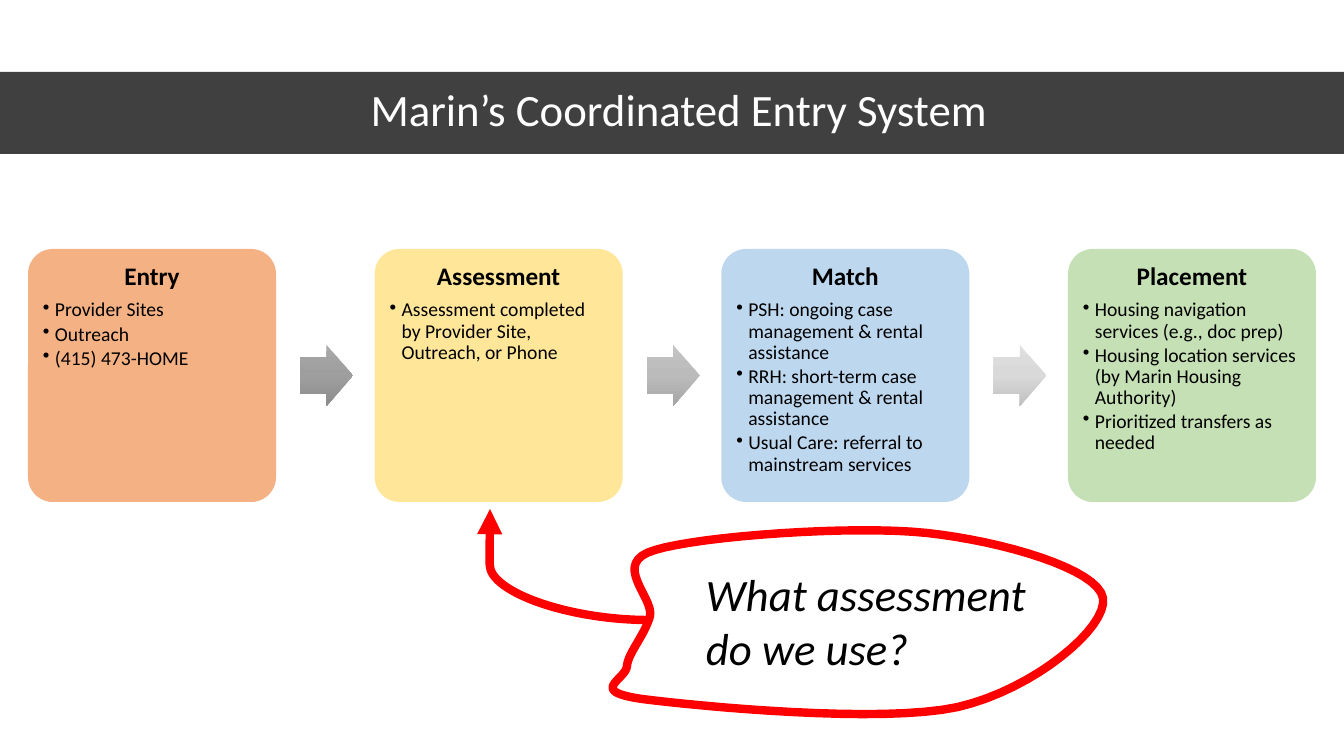
from copy import deepcopy

from lxml import etree
from pptx import Presentation
from pptx.dml.color import RGBColor
from pptx.enum.shapes import MSO_CONNECTOR, MSO_SHAPE
from pptx.enum.text import MSO_ANCHOR, PP_ALIGN
from pptx.oxml.ns import qn
from pptx.util import Pt

RECT, ROUND, ARROW = MSO_SHAPE.RECTANGLE, MSO_SHAPE.ROUNDED_RECTANGLE, MSO_SHAPE.RIGHT_ARROW
CURVE = MSO_CONNECTOR.CURVE
TOP, MIDDLE = MSO_ANCHOR.TOP, MSO_ANCHOR.MIDDLE
LEFT, CENTER = PP_ALIGN.LEFT, PP_ALIGN.CENTER
BLACK, WHITE = RGBColor(0, 0, 0), RGBColor(255, 255, 255)
RED = RGBColor(255, 0, 0)
ORANGE, YELLOW = RGBColor(0xF4, 0xB1, 0x83), RGBColor(0xFF, 0xE6, 0x99)
BLUE, GREEN = RGBColor(0xBD, 0xD7, 0xEE), RGBColor(0xC5, 0xE0, 0xB4)
FONT = "Calibri"

TITLE = "Marin’s Coordinated Entry System"
QUESTION = "What assessment do we use?"
STAGES = [
    ("Entry", ORANGE, ["Provider Sites", "Outreach", "(415) 473-HOME"]),
    ("Assessment", YELLOW, ["Assessment completed by Provider Site, Outreach, or Phone"]),
    ("Match", BLUE, [
        "PSH: ongoing case management & rental assistance",
        "RRH: short-term case management & rental assistance",
        "Usual Care: referral to mainstream services",
    ]),
    ("Placement", GREEN, [
        "Housing navigation services (e.g., doc prep)",
        "Housing location services (by Marin Housing Authority)",
        "Prioritized transfers as needed",
    ]),
]
ARROW_GREYS = [(0xA8, 0x9E, 0x8C), (0xC3, 0xBB, 0xA6), (0xDF, 0xD9, 0xC0)]
BUBBLE_START = (650, 616)
BUBBLE_CURVES = [
    ((654, 597), (610, 563), (655, 550)),
    ((701, 536), (853, 525), (927, 533)),
    ((1002, 541), (1098, 569), (1103, 598)),
    ((1108, 627), (1035, 689), (958, 707)),
    ((881, 724), (697, 706), (642, 699)),
    ((587, 691), (626, 680), (627, 666)),
    ((628, 653), (645, 635), BUBBLE_START),
]
CURVE_STEPS = 16
FIRST_LEFT, LAST_LEFT, STAGE_TOP = 28, 1068, 249
STAGE_W, STAGE_H = 248, 253
PITCH = (LAST_LEFT - FIRST_LEFT) / (len(STAGES) - 1)
PAD, INSET, INDENT = 8, 7, 12
ARROW_DX, ARROW_W, ARROW_H = 272, 53, 61


def px(n):
    return round(n * 914400 / 100.8)


def add_shape(kind, x, y, w, h, color=None, adjust=()):
    s = slide.shapes.add_shape(kind, px(x), px(y), px(w), px(h))
    s.shadow.inherit = False
    s.line.fill.background()
    for i, value in enumerate(adjust):
        s.adjustments[i] = value
    if color is not None:
        s.fill.solid()
        s.fill.fore_color.rgb = color
    return s


def add_box(x, y, w, h, anchor=TOP, inset=None):
    tf = slide.shapes.add_textbox(px(x), px(y), px(w), px(h)).text_frame
    tf.word_wrap = True
    tf.vertical_anchor = anchor
    if inset is not None:
        tf.margin_left = tf.margin_right = tf.margin_top = tf.margin_bottom = px(inset)
    return tf


def add_text(tf, text, size=14, color=BLACK, bold=False, italic=False,
             align=LEFT, spacing=0.9, after=0, bullet=False):
    p = tf.paragraphs[-1]
    if p.runs:
        p = tf.add_paragraph()
    p.alignment, p.line_spacing, p.space_after = align, spacing, Pt(after)
    if bullet:
        ppr = p._p.get_or_add_pPr()
        ppr.set("marL", str(px(INDENT)))
        ppr.set("indent", str(-px(INDENT)))
        etree.SubElement(ppr, qn("a:buChar")).set("char", "•")
    r = p.add_run()
    r.text = text
    r.font.name, r.font.size, r.font.color.rgb = FONT, Pt(size), color
    r.font.bold, r.font.italic = bold, italic


def fill_gradient(s, greys):
    s.fill.gradient()
    s.fill.gradient_angle = 270
    stops = s._element.spPr.find(".//" + qn("a:gsLst"))
    stops.insert(1, deepcopy(stops[0]))
    for i, (stop, grey) in enumerate(zip(s.fill.gradient_stops, greys)):
        stop.position = i / 2
        stop.color.rgb = RGBColor(grey, grey, grey)


def curve_points(start, curves):
    for a, b, end in curves:
        for i in range(1, CURVE_STEPS + 1):
            t = i / CURVE_STEPS
            u = 1 - t
            yield tuple(px(u**3 * p0 + 3 * u * u * t * p1 + 3 * u * t * t * p2 + t**3 * p3)
                        for p0, p1, p2, p3 in zip(start, a, b, end))
        start = end


def add_bubble():
    builder = slide.shapes.build_freeform(*map(px, BUBBLE_START))
    builder.add_line_segments(list(curve_points(BUBBLE_START, BUBBLE_CURVES)), close=True)
    s = builder.convert_to_shape()
    s.shadow.inherit = False
    s.fill.background()
    s.line.color.rgb, s.line.width = RED, Pt(6)


def add_pointer():
    s = slide.shapes.add_connector(CURVE, px(490), px(509), px(649), px(620))
    s.line.color.rgb, s.line.width = RED, Pt(6)
    sppr = s._element.spPr
    sppr.find(qn("a:xfrm")).set("rot", "10800000")
    guide = etree.SubElement(sppr.find(".//" + qn("a:avLst")), qn("a:gd"))
    guide.set("name", "adj1")
    guide.set("fmla", "val 100200")
    etree.SubElement(sppr.find(qn("a:ln")), qn("a:tailEnd")).set("type", "triangle")
    etree.SubElement(sppr, qn("a:effectLst"))


prs = Presentation()
prs.slide_width, prs.slide_height = px(1344), px(756)
slide = prs.slides.add_slide(prs.slide_layouts[6])

add_bubble()
band = add_shape(RECT, 0, 72, 1344, 82, BLACK)
etree.SubElement(band._element.spPr.find(".//" + qn("a:srgbClr")), qn("a:alpha")).set("val", "75000")
add_text(add_box(61, 71, 1236, 82, MIDDLE), TITLE, size=32, color=WHITE, align=CENTER)

for i, (name, color, points) in enumerate(STAGES):
    x = FIRST_LEFT + i * PITCH
    add_shape(ROUND, x, STAGE_TOP, STAGE_W, STAGE_H, color, [0.1])
    tf = add_box(x + PAD, STAGE_TOP + PAD, STAGE_W - 2 * PAD, STAGE_H - 2 * PAD, inset=INSET)
    add_text(tf, name, size=18, bold=True, align=CENTER, after=6.3)
    for point in points:
        add_text(tf, point, after=2.1, bullet=True)
    if i < len(ARROW_GREYS):
        y = STAGE_TOP + (STAGE_H - ARROW_H) / 2
        arrow = add_shape(ARROW, x + ARROW_DX, y, ARROW_W, ARROW_H, adjust=[0.6, 0.5])
        fill_gradient(arrow, ARROW_GREYS[i])

add_text(add_box(696, 562, 359, 119), QUESTION, size=32, italic=True, spacing=1.0)
add_pointer()
prs.save("out.pptx")
